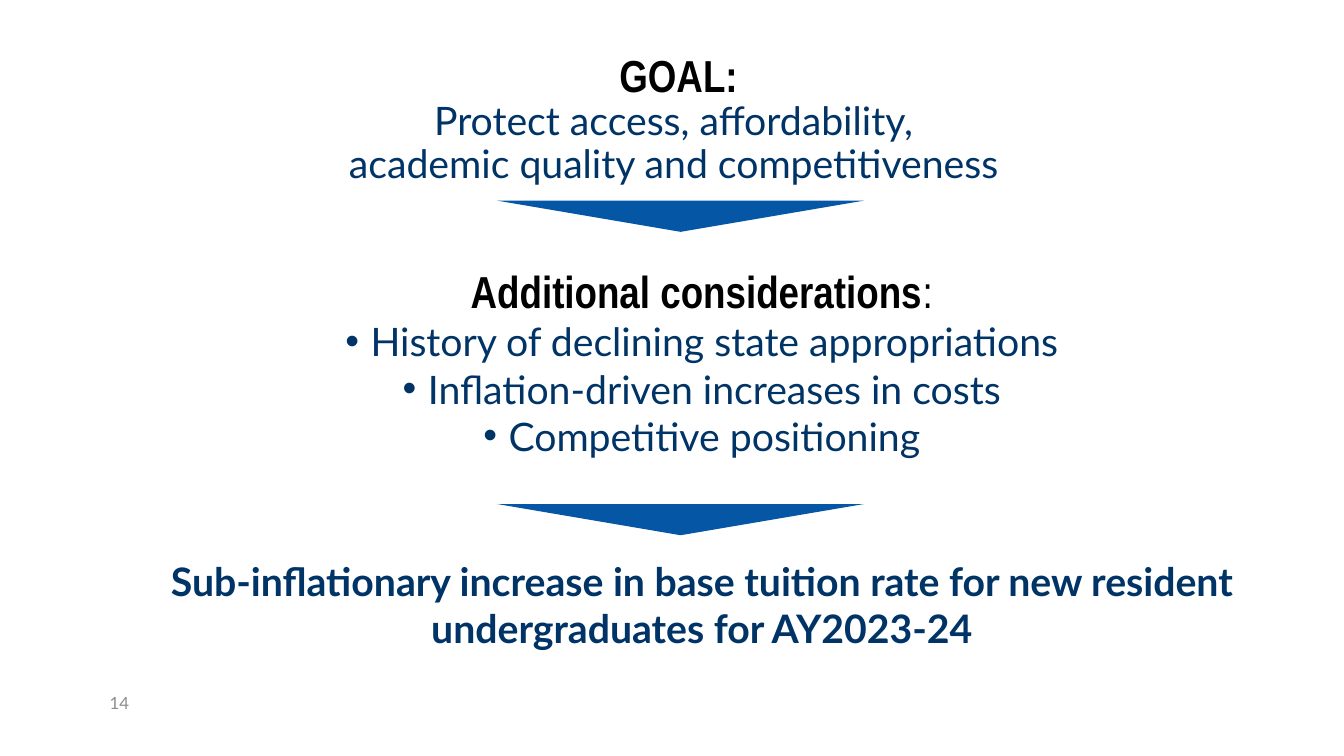
from lxml import etree
from pptx import Presentation
from pptx import util as u
from pptx.dml.color import RGBColor
from pptx.enum import shapes, text
from pptx.oxml.ns import qn

COLORS = {"heading": "000000", "body": "003366", "arrow": "0556A5", "number": "8C8C8C"}
HEADING_FONT, BODY_FONT = "Arial Narrow", "Lato"
CONSIDERATIONS = [
    "History of declining state appropriations",
    "Inflation-driven increases in costs",
    "Competitive positioning",
]


def style(run, font_name, size, color, bold=False):
    run.font.name = font_name
    run.font.size = u.Pt(size)
    run.font.bold = bold
    run.font.color.rgb = RGBColor.from_string(COLORS[color])


def add_text_box(slide, box):
    frame = slide.shapes.add_textbox(*map(u.Inches, box)).text_frame
    frame.word_wrap = True
    return frame


def add_bullet(paragraph):
    properties = paragraph._p.get_or_add_pPr()
    properties.set("marL", str(u.Inches(0.25)))
    properties.set("indent", str(-u.Inches(0.25)))
    etree.SubElement(properties, qn("a:buFont")).set("typeface", "Arial")
    etree.SubElement(properties, qn("a:buChar")).set("char", "•")


def place_goal(slide, box):
    title = slide.shapes.title
    title.left, title.top, title.width, title.height = map(u.Inches, box)
    frame = title.text_frame
    frame.auto_size = text.MSO_AUTO_SIZE.NONE
    frame.word_wrap = True
    frame.vertical_anchor = text.MSO_ANCHOR.TOP
    frame.text = "GOAL:\vProtect access, affordability, \vacademic quality and competitiveness "
    paragraph = frame.paragraphs[0]
    paragraph.alignment = text.PP_ALIGN.CENTER
    paragraph.line_spacing = 0.9
    heading, *goal_lines = paragraph.runs
    style(heading, HEADING_FONT, 32, "heading", bold=True)
    for run in goal_lines:
        style(run, BODY_FONT, 28, "body")


def add_considerations(slide, box):
    frame = add_text_box(slide, box)
    heading = frame.paragraphs[0]
    heading.alignment = text.PP_ALIGN.CENTER
    for words, bold in (("Additional considerations", True), (":", False)):
        run = heading.add_run()
        run.text = words
        style(run, HEADING_FONT, 32, "heading", bold)
    for consideration in CONSIDERATIONS:
        paragraph = frame.add_paragraph()
        paragraph.text = consideration
        paragraph.alignment = text.PP_ALIGN.CENTER
        add_bullet(paragraph)
        style(paragraph.runs[0], BODY_FONT, 28, "body")


def add_conclusion(slide, box):
    frame = add_text_box(slide, box)
    frame.text = ("Sub-inflationary increase in base tuition rate for new resident "
                  "undergraduates for AY2023-24")
    paragraph = frame.paragraphs[0]
    paragraph.alignment = text.PP_ALIGN.CENTER
    style(paragraph.runs[0], BODY_FONT, 28, "body", bold=True)


def add_down_arrow(slide, box):
    arrow = slide.shapes.add_shape(shapes.MSO_SHAPE.ISOSCELES_TRIANGLE, *map(u.Inches, box))
    arrow.rotation = 180
    arrow.shadow.inherit = False
    arrow.fill.solid()
    arrow.fill.fore_color.rgb = RGBColor.from_string(COLORS["arrow"])
    arrow.line.fill.background()


def add_slide_number(slide, box):
    frame = add_text_box(slide, box)
    frame.text = "14"
    style(frame.paragraphs[0].runs[0], BODY_FONT, 12, "number")


def main():
    presentation = Presentation()
    presentation.slide_width = u.Inches(13.33)
    presentation.slide_height = u.Inches(7.5)
    slide = presentation.slides.add_slide(presentation.slide_layouts.get_by_name("Title Only"))
    place_goal(slide, (0.13, 0.48, 13.2, 1.92))
    add_considerations(slide, (0.94, 2.57, 12.04, 2.36))
    add_conclusion(slide, (1.59, 5.48, 10.74, 1.58))
    for top in (1.99, 5):
        add_down_arrow(slide, (4.93, top, 3.64, 0.31))
    add_slide_number(slide, (0.99, 6.82, 3, 0.4))
    presentation.save("out.pptx")


if __name__ == "__main__":
    main()
